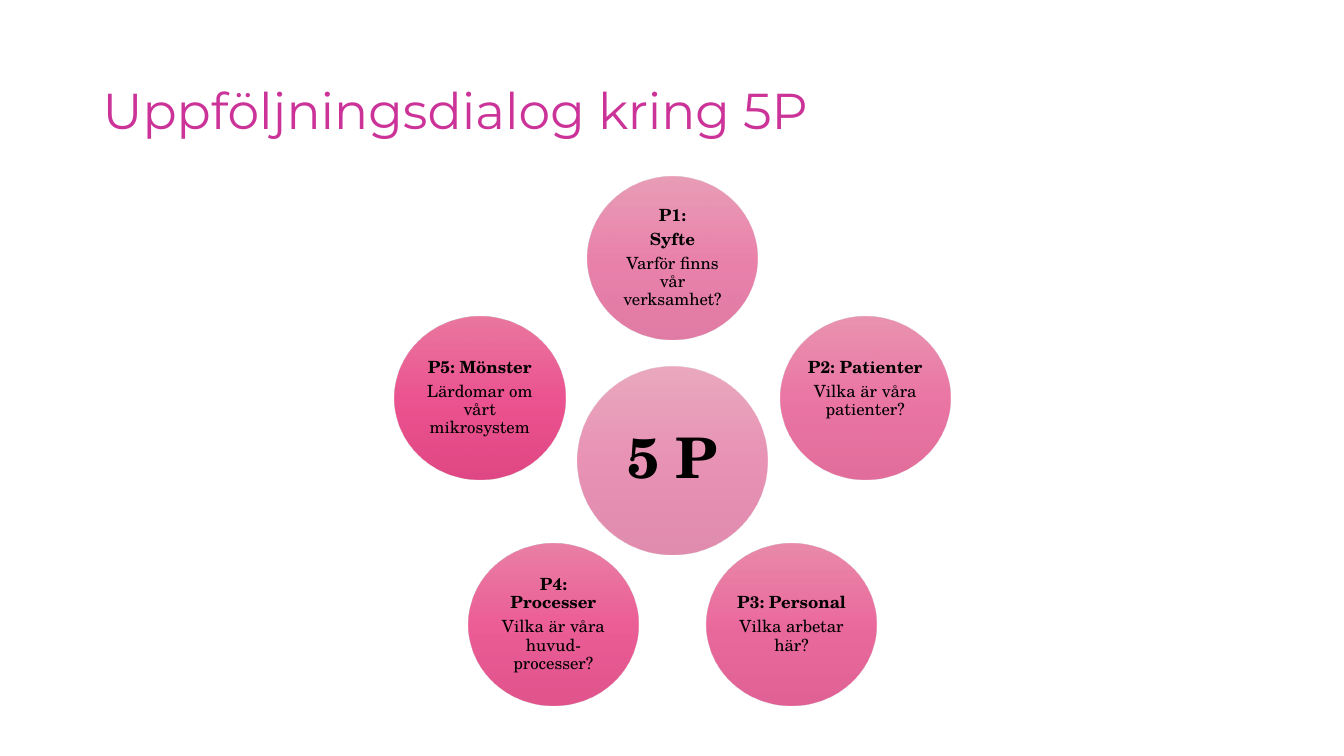
"""Build the slide with the five P circles around a hub."""
from math import cos, radians, sin

from lxml.etree import SubElement
from pptx import Presentation
from pptx.dml.color import RGBColor
from pptx.enum.shapes import MSO_SHAPE
from pptx.enum.text import MSO_ANCHOR, PP_ALIGN
from pptx.oxml.ns import qn
from pptx.util import Inches, Pt


def style_text(paragraph, font_name, size, color, bold=False):
    paragraph.line_spacing = 0.9
    paragraph.font.name = font_name
    paragraph.font.size = Pt(size)
    paragraph.font.bold = bold
    paragraph.font.color.rgb = RGBColor.from_string(color)


def add_circle(page, center, size, colors, opacity, inset, lines, font_size):
    width, height = size
    circle = page.shapes.add_shape(
        MSO_SHAPE.OVAL, Inches(center[0] - width / 2), Inches(center[1] - height / 2),
        Inches(width), Inches(height))
    circle.shadow.inherit = False
    circle.line.fill.background()
    circle.fill.gradient()
    circle.fill.gradient_angle = 270
    stops = circle.element.spPr.find(qn("a:gradFill")).find(qn("a:gsLst"))
    stops.clear()
    for position, color in zip((0, 50, 100), colors):
        stop = SubElement(stops, qn("a:gs"), pos=str(position * 1000))
        tint = SubElement(stop, qn("a:srgbClr"), val=color)
        SubElement(tint, qn("a:alpha"), val=str(opacity * 1000))

    frame = circle.text_frame
    frame.word_wrap = True
    frame.vertical_anchor = MSO_ANCHOR.MIDDLE
    frame.margin_left = frame.margin_right = Inches(inset)
    frame.margin_top = frame.margin_bottom = Inches(inset)
    frame.text = "\n".join(lines)
    for paragraph, line in zip(frame.paragraphs, lines):
        style_text(paragraph, "TeX Gyre Schola", font_size, "000000",
                   bold=len(lines) == 1 or line != lines[-1])
        paragraph.alignment = PP_ALIGN.CENTER
        paragraph.space_after = Pt(font_size * 0.35)


deck = Presentation()
deck.slide_width = Inches(13.33)
deck.slide_height = Inches(7.5)
page = deck.slides.add_slide(deck.slide_layouts[6])

title = page.shapes.add_textbox(Inches(0.92), Inches(0.4), Inches(11.5), Inches(1.45))
title.text_frame.word_wrap = True
title.text_frame.vertical_anchor = MSO_ANCHOR.MIDDLE
title.text_frame.text = "Uppföljningsdialog kring 5P"
style_text(title.text_frame.paragraphs[0], "Montserrat", 36, "CC3399")

hub = (6.67, 4.57)
orbit = 2.01
add_circle(page, hub, (1.89, 1.86), ("D5537D", "D3256A", "C3195D"), 50, 0.06, ["5 P"], 40)

petals = [
    (("D9537F", "DA236C", "C9175F"), ["P1:", "Syfte", "Varför finns vår verksamhet?"]),
    (("DC5481", "DF246E", "D01660"), ["P2: Patienter", "Vilka är våra patienter?\v"]),
    (("DF5583", "E22671", "D21863"), ["P3: Personal", "Vilka arbetar här?"]),
    (("E25686", "E52874", "D51A65"), ["P4: Processer", "Vilka är våra huvud-processer?"]),
    (("E55888", "E82A76", "D81C67"), ["P5: Mönster", "Lärdomar om vårt mikrosystem"]),
]
for index, (colors, lines) in enumerate(petals):
    angle = radians(index * 360 / len(petals))
    center = (hub[0] + orbit * sin(angle), hub[1] - orbit * cos(angle))
    add_circle(page, center, (1.69, 1.61), colors, 56 + 6 * index, 0.02, lines, 12)

deck.save("out.pptx")
